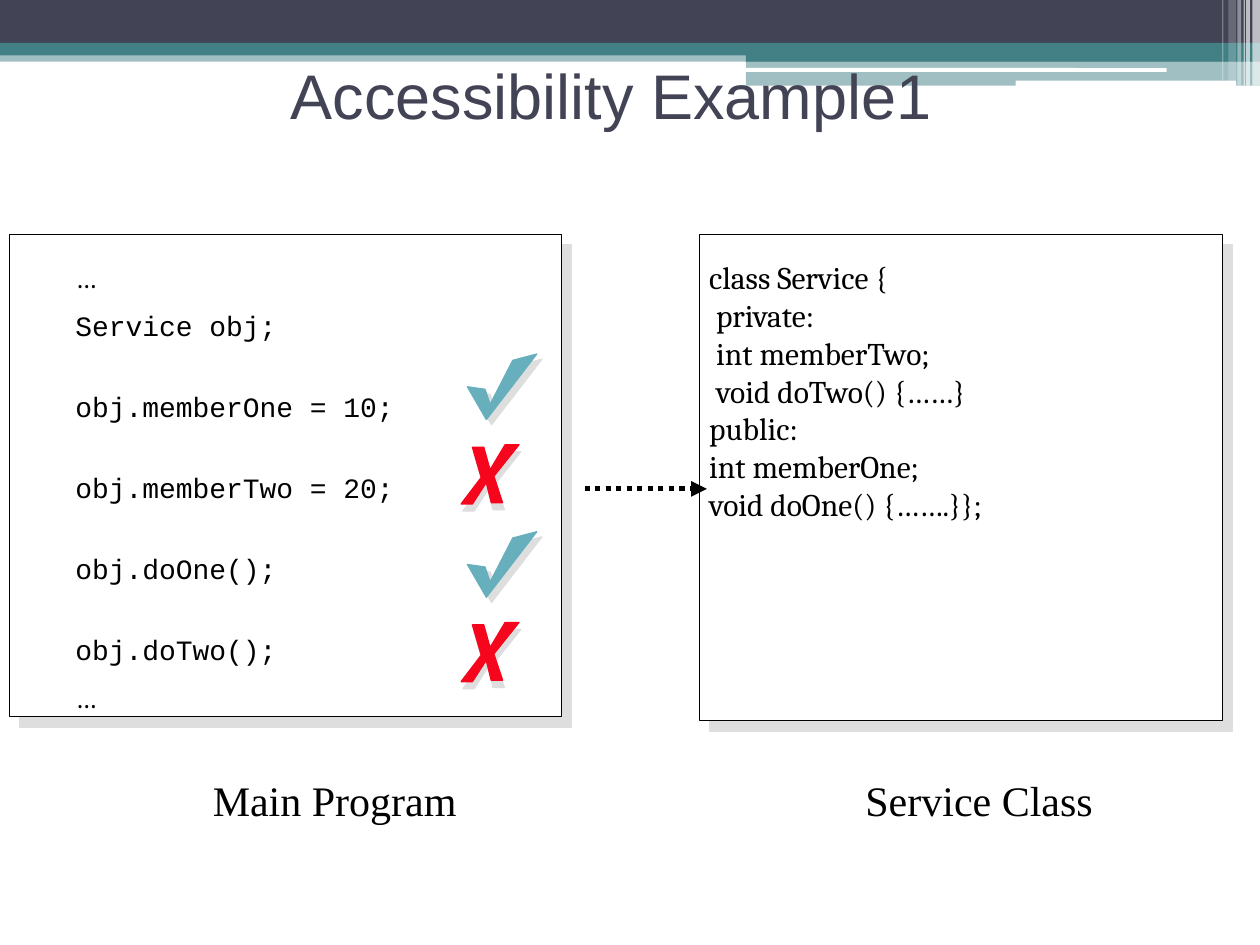
import pptx
import pptx.util
import pptx.dml.color
import pptx.enum.dml
import pptx.enum.shapes
import pptx.enum.text
import pptx.oxml
import pptx.oxml.ns

RGB = pptx.dml.color.RGBColor
SHAPE = pptx.enum.shapes.MSO_SHAPE
NAVY = RGB(0x42, 0x44, 0x56)
TEAL = RGB(0x43, 0x80, 0x86)
WHITE = RGB(0xFF, 0xFF, 0xFF)
BLACK = RGB(0, 0, 0)
GRAY = RGB(0xDE, 0xDE, 0xDE)
TICK_BLUE = RGB(0x67, 0xAF, 0xBD)
CROSS_RED = RGB(0xF6, 0x06, 0x1D)

COLS, ROWS = 100, 75

# left, top, width, height, colour, opacity in percent
BANDS = [
    (0, 4, 100, 0.9, TEAL, 50),
    (0, 0, 100, 3.4, NAVY, 100),
    (0, 3.4, 100, 1, TEAL, 100),
    (59.2, 3.9, 40.8, 1, TEAL, 100),
    (59.2, 4.8, 40.8, 2, TEAL, 50),
]
PILLS = [(59.1, 5.4, 33.5, 0.3), (80.6, 6.4, 17.5, 0.45)]
# left, width, height, opacity in percent
STRIPES = [
    (99.4, 0.6, 6.8, 65), (98.9, 0.3, 6.8, 65), (98.7, 0.1, 6.8, 60),
    (98.2, 0.3, 6.8, 40), (97.5, 0.6, 6.4, 20), (97, 0.1, 6.4, 30),
]

TICK = [(37.1, 30.7), (38.5, 30.9), (38.9, 32.1), (40.7, 28.6), (42.6, 28.1), (38.6, 33.3)]
CROSS = [(37.5, 35.5), (38.4, 35.5), (38.9, 37.3), (40.1, 35.3), (41.2, 35.3), (39.2, 37.8),
         (39.9, 39.9), (39, 39.9), (38.6, 38.3), (37.5, 40), (36.6, 40), (38.2, 37.9)]
MARK_STEP = 14.1

SERVICE_CODE = ["class Service {", " private:", " int memberTwo;", " void doTwo() {……}",
                "public:", "int memberOne;", "void doOne() {…….}};"]
# text, font, line spacing
MAIN_CODE = [("…", "Cambria", 1), ("Service obj;", "Courier New", 1)]
MAIN_CODE += [(line, "Courier New", 2) for line in (
    "obj.memberOne = 10;", "obj.memberTwo = 20;", "obj.doOne();", "obj.doTwo();")]
MAIN_CODE += [("…", "Cambria", 1)]


class SlideBuilder:
    """Holds the slide and its style; lengths are columns and rows of the grid."""

    def __init__(self, prs):
        self.s = prs.slides.add_slide(prs.slide_layouts[5])
        self.col = prs.slide_width / COLS
        self.row = prs.slide_height / ROWS

    def box(self, x, y, w, h):
        return (round(x * self.col), round(y * self.row),
                round(w * self.col), round(h * self.row))

    def font(self, p, name, size, color=BLACK):
        for r in p.runs:
            r.font.name, r.font.size = name, pptx.util.Pt(size)
            r.font.color.rgb = color

    def effects(self, sp, distance=0, angle=45):
        """Replace the theme's shadow by a hard gray one, or by none."""
        ns = pptx.oxml.ns.nsdecls("a")
        shadow = "" if not distance else (
            f'<a:outerShdw dist="{pptx.util.Pt(distance)}" dir="{angle * 60000}" algn="ctr" '
            f'rotWithShape="0"><a:srgbClr val="{GRAY}"/></a:outerShdw>')
        effects = pptx.oxml.parse_xml(f"<a:effectLst {ns}>{shadow}</a:effectLst>")
        sp._element.spPr.append(effects)

    def paint(self, sp, fill, line=None, opacity=100):
        sp.fill.solid()
        sp.fill.fore_color.rgb = fill
        if opacity < 100:
            color = sp._element.spPr.find(".//" + pptx.oxml.ns.qn("a:srgbClr"))
            alpha = pptx.oxml.parse_xml(
                f'<a:alpha {pptx.oxml.ns.nsdecls("a")} val="{opacity * 1000}"/>')
            color.append(alpha)
        if line is None:
            sp.line.fill.background()
        else:
            sp.line.color.rgb = line
            sp.line.width = pptx.util.Pt(0.75)

    def band(self, x, y, w, h, color, opacity=100, kind=SHAPE.RECTANGLE):
        sp = self.s.shapes.add_shape(kind, *self.box(x, y, w, h))
        self.paint(sp, color, opacity=opacity)
        self.effects(sp)

    def title(self, text, x, y, w, h):
        sp = self.s.shapes.title
        self.s.shapes._spTree.append(sp._element)  # above the bands
        sp.left, sp.top, sp.width, sp.height = self.box(x, y, w, h)
        tf = sp.text_frame
        tf.text = text
        tf.vertical_anchor = pptx.enum.text.MSO_ANCHOR.MIDDLE
        p = tf.paragraphs[0]
        p.alignment = pptx.enum.text.PP_ALIGN.CENTER
        self.font(p, "Arial", 36, NAVY)

    def text(self, shapes, lines, x, y, w, h, font, size, wrap=True):
        tf = shapes.add_textbox(*self.box(x, y, w, h)).text_frame
        tf.text = "\n".join(lines)
        tf.word_wrap = wrap
        tf.auto_size = pptx.enum.text.MSO_AUTO_SIZE.SHAPE_TO_FIT_TEXT
        for p in tf.paragraphs:
            self.font(p, font, size)
        return tf

    def panel(self, x, y, w, h):
        """Add a group with a shadowed frame and return the group's shapes."""
        shapes = self.s.shapes.add_group_shape().shapes
        sp = shapes.add_shape(SHAPE.RECTANGLE, *self.box(x, y, w, h))
        self.paint(sp, WHITE, BLACK)
        self.effects(sp, 8.5)
        return shapes

    def mark(self, points, dy, color, angle):
        corners = [(x * self.col, (y + dy) * self.row) for x, y in points]
        outline = self.s.shapes.build_freeform(*corners[0])
        outline.add_line_segments(corners[1:], close=True)
        sp = outline.convert_to_shape()
        self.paint(sp, color, color)
        self.effects(sp, 4.2, angle)

    def dotted_arrow(self, x1, x2, y):
        left, top, width, _ = self.box(x1, y, x2 - x1, 0)
        line = self.s.shapes.add_connector(
            pptx.enum.shapes.MSO_CONNECTOR.STRAIGHT, left, top, left + width, top)
        line.line.color.rgb = BLACK
        line.line.width = pptx.util.Pt(3)
        line.line.dash_style = pptx.enum.dml.MSO_LINE.ROUND_DOT
        line.line._get_or_add_ln().append(pptx.oxml.parse_xml(
            f'<a:tailEnd {pptx.oxml.ns.nsdecls("a")} type="triangle"/>'))
        self.effects(line)


def main():
    prs = pptx.Presentation()
    prs.slide_width, prs.slide_height = pptx.util.Inches(10), pptx.util.Inches(7.5)
    b = SlideBuilder(prs)

    for band in BANDS:
        b.band(*band)
    for pill in PILLS:
        b.band(*pill, WHITE, kind=SHAPE.ROUNDED_RECTANGLE)
    for x, w, h, opacity in STRIPES:
        b.band(x, 0, w, h, WHITE, opacity)
    b.title("Accessibility Example1 ", 6.7, 2.9, 85, 9.2)

    service = b.panel(55.5, 18.6, 41.5, 38.6)
    b.text(service, SERVICE_CODE, 55.3, 20, 42.2, 22.2, "Cambria", 18)

    program = b.panel(0.75, 18.6, 43.8, 38.3)
    tf = b.text(program, [line for line, _, _ in MAIN_CODE],
                0, 20.2, 44.5, 42.4, "Courier New", 16)
    for p, (_, font, spacing) in zip(tf.paragraphs, MAIN_CODE):
        p.level = 1
        p._p.get_or_add_pPr().set("marL", str(pptx.util.Inches(0.5)))
        p.line_spacing = spacing
        p.space_before = pptx.util.Pt(8)
        b.font(p, font, 16)

    for dy in (0, MARK_STEP):
        b.mark(TICK, dy, TICK_BLUE, 45)
        b.mark(CROSS, dy, CROSS_RED, 76)

    for caption, x, w in (("Main Program", 15.9, 21.5), ("Service Class", 67.7, 21.1)):
        b.text(b.s.shapes, [caption], x, 61, w, 5, "Times New Roman", 24, wrap=False)
    b.dotted_arrow(46.4, 56.1, 38.8)

    prs.save("out.pptx")


if __name__ == "__main__":
    main()
